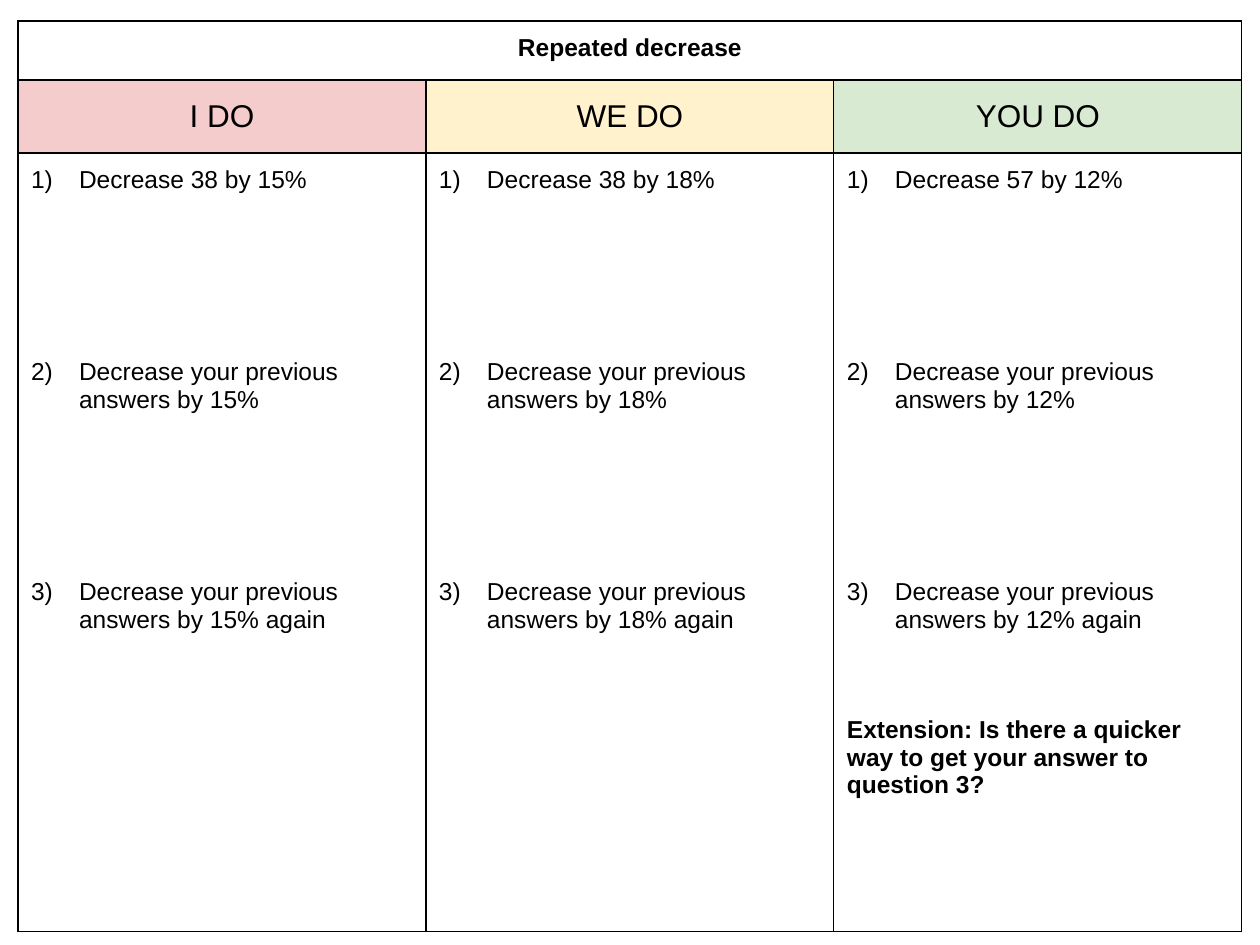
from lxml import etree
from pptx import Presentation
from pptx import util as u
from pptx.dml import color
from pptx.enum import text
from pptx.oxml import ns


def px(n):
    return u.Emu(round(n * 914400 / 126))


def rgb(code):
    return color.RGBColor.from_string(code)


deck = Presentation()
deck.slide_width, deck.slide_height = px(1260), px(945)
slide = deck.slides.add_slide(deck.slide_layouts[6])

wide, rows = 408, [59, 73, 779]
frame = slide.shapes.add_table(3, 3, px(18), px(21), px(3 * wide), px(sum(rows)))
grid = frame.table
grid.first_row = grid.horz_banding = False
for col in grid.columns:
    col.width = px(wide)
for row, high in zip(grid.rows, rows):
    row.height = px(high)

for cell in grid.iter_cells():
    cell.margin_left = cell.margin_right = px(13)
    cell.margin_top = cell.margin_bottom = px(13)
    prop = cell._tc.get_or_add_tcPr()
    for side in ("a:lnL", "a:lnR", "a:lnT", "a:lnB"):
        line = etree.SubElement(prop, ns.qn(side), w=str(u.Pt(0.75)))
        fill = etree.SubElement(line, ns.qn("a:solidFill"))
        etree.SubElement(fill, ns.qn("a:srgbClr"), val="000000")
    cell.fill.background()

title = grid.cell(0, 0)
title.merge(grid.cell(0, 2))
title.text_frame.text = "Repeated decrease"

parts = [
    ("I DO", "F4CCCC", 38, 15),
    ("WE DO", "FFF2CC", 38, 18),
    ("YOU DO", "D9EAD3", 57, 12),
]
for i, (name, tint, start, rate) in enumerate(parts):
    head = grid.cell(1, i)
    head.text_frame.text = name
    head.vertical_anchor = text.MSO_ANCHOR.MIDDLE
    head.fill.solid()
    head.fill.fore_color.rgb = rgb(tint)

    body = grid.cell(2, i).text_frame
    body.text = "\n".join([
        f"Decrease {start} by {rate}%",
        f"Decrease your previous answers by {rate}%",
        f"Decrease your previous answers by {rate}% again",
    ])
    for k, para in enumerate(body.paragraphs):
        if k:
            para.space_before = px(165)
        prop = para._p.get_or_add_pPr()
        prop.set("marL", str(px(48)))
        prop.set("indent", str(px(-48)))
        tone = etree.SubElement(prop, ns.qn("a:buClr"))
        etree.SubElement(tone, ns.qn("a:srgbClr"), val="000000")
        etree.SubElement(prop, ns.qn("a:buFont"), typeface="Arial")
        etree.SubElement(prop, ns.qn("a:buAutoNum"), type="arabicParenR")

extra = grid.cell(2, 2).text_frame.add_paragraph()
extra.text = "Extension: Is there a quicker way to get your answer to question 3?"
extra.space_before = px(83)

for r in range(3):
    for c in range(3):
        for para in grid.cell(r, c).text_frame.paragraphs:
            if r < 2:
                para.alignment = text.PP_ALIGN.CENTER
            for run in para.runs:
                run.font.name = "Arial"
                run.font.size = u.Pt(18 if r == 1 else 14)
                run.font.bold = r == 0 or run.text.startswith("Extension")
                run.font.color.rgb = rgb("000000")

deck.save("out.pptx")
